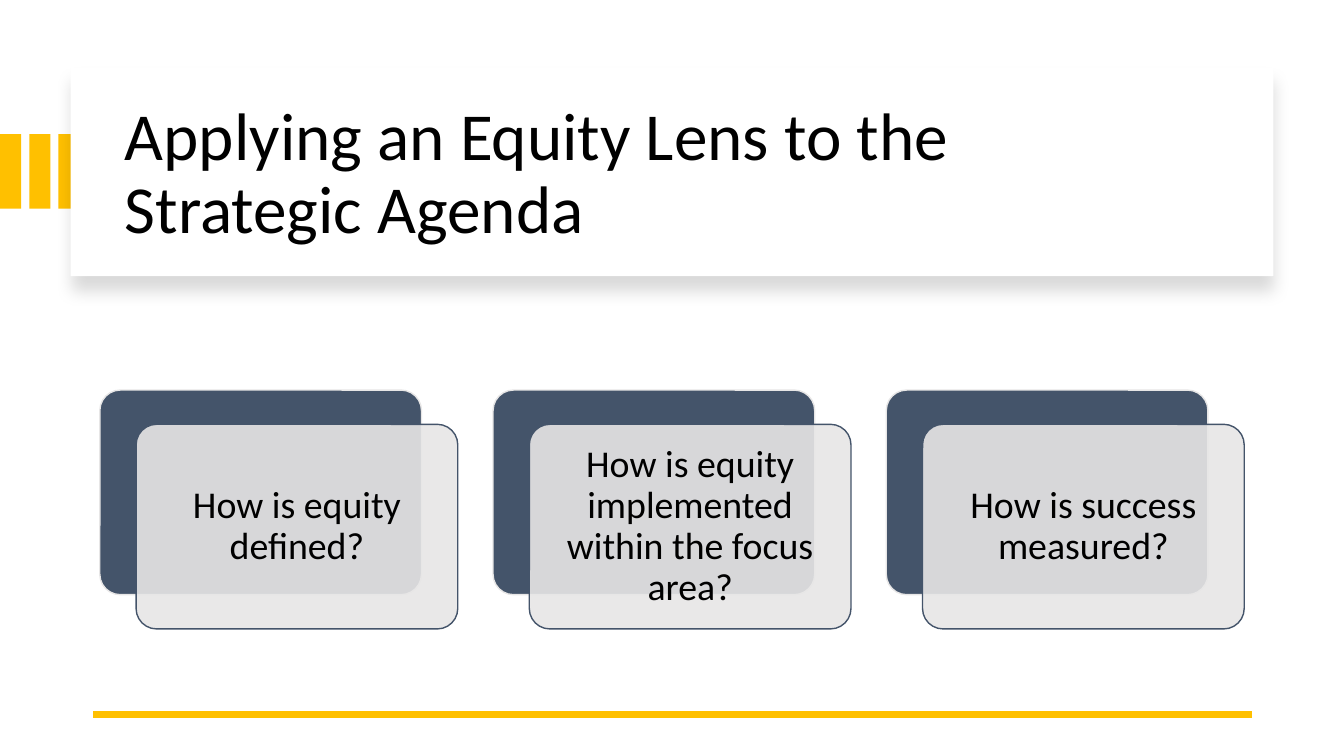
from dataclasses import dataclass

from lxml import etree
from pptx import Presentation
from pptx.dml.color import RGBColor
from pptx.enum.shapes import MSO_CONNECTOR, MSO_SHAPE
from pptx.enum.text import MSO_ANCHOR, PP_ALIGN
from pptx.oxml.ns import qn
from pptx.util import Inches, Pt

RECT = MSO_SHAPE.RECTANGLE
ROUNDED = MSO_SHAPE.ROUNDED_RECTANGLE
STRAIGHT = MSO_CONNECTOR.STRAIGHT
MIDDLE = MSO_ANCHOR.MIDDLE
LEFT = PP_ALIGN.LEFT
CENTER = PP_ALIGN.CENTER


@dataclass(frozen=True)
class Theme:
    font: str = "Calibri"
    ink: str = "000000"
    paper: str = "FFFFFF"
    accent: str = "FFC000"
    navy: str = "44546A"
    mist: str = "E7E6E6"
    title_size: float = 48
    question_size: float = 27
    outline: float = 1
    rule: float = 4.5


class SlideBuilder:
    def __init__(self, slide, theme):
        self.slide = slide
        self.theme = theme
        slide.background.fill.solid()
        slide.background.fill.fore_color.rgb = RGBColor.from_string(theme.paper)

    def panel(self, kind, left, top, width, height, fill, outline=None):
        panel = self.slide.shapes.add_shape(
            kind, Inches(left), Inches(top), Inches(width), Inches(height))
        panel.shadow.inherit = False
        panel.fill.solid()
        panel.fill.fore_color.rgb = RGBColor.from_string(fill)
        if outline:
            panel.line.color.rgb = RGBColor.from_string(outline)
            panel.line.width = Pt(self.theme.outline)
        else:
            panel.line.fill.background()
        return panel

    def card(self, left, top, width, height, fill, outline):
        card = self.panel(ROUNDED, left, top, width, height, fill, outline)
        card.adjustments[0] = 0.1
        return card

    def text_box(self, left, top, width, height):
        return self.slide.shapes.add_textbox(
            Inches(left), Inches(top), Inches(width), Inches(height))

    def add_text(self, holder, lines, size, align):
        frame = holder.text_frame
        frame.word_wrap = True
        frame.vertical_anchor = MIDDLE
        paragraph = frame.paragraphs[0]
        paragraph.alignment = align
        paragraph.line_spacing = 0.9
        for index, line in enumerate(lines):
            if index:
                paragraph.add_line_break()
            run = paragraph.add_run()
            run.text = line
            run.font.name = self.theme.font
            run.font.size = Pt(size)
            run.font.color.rgb = RGBColor.from_string(self.theme.ink)

    def inset(self, holder, margin):
        frame = holder.text_frame
        frame.margin_left = frame.margin_right = Inches(margin)
        frame.margin_top = frame.margin_bottom = Inches(margin)

    def opacity(self, panel, percent):
        color = panel._element.spPr.find(qn("a:solidFill"))[0]
        etree.SubElement(color, qn("a:alpha"), val=str(percent * 1000))

    def drop_shadow(self, panel, blur, distance, percent):
        effects = panel._element.spPr.find(qn("a:effectLst"))
        shadow = etree.SubElement(
            effects, qn("a:outerShdw"), blurRad=str(Pt(blur)),
            dist=str(Pt(distance)), dir="5400000", algn="t", rotWithShape="0")
        color = etree.SubElement(shadow, qn("a:srgbClr"), val=self.theme.ink)
        etree.SubElement(color, qn("a:alpha"), val=str(percent * 1000))

    def rule(self, left, right, y):
        rule = self.slide.shapes.add_connector(
            STRAIGHT, Inches(right), Inches(y), Inches(left), Inches(y))
        rule.line.color.rgb = RGBColor.from_string(self.theme.accent)
        rule.line.width = Pt(self.theme.rule)
        etree.SubElement(rule._element.spPr, qn("a:effectLst"))


def main():
    theme = Theme()
    deck = Presentation()
    deck.slide_width = Inches(13.33)
    deck.slide_height = Inches(7.5)
    builder = SlideBuilder(deck.slides.add_slide(deck.slide_layouts[6]), theme)

    for index in range(3):
        builder.panel(RECT, index * 0.29, 1.33, 0.21, 0.74, theme.accent)

    title_panel = builder.panel(RECT, 0.7, 0.67, 11.93, 2.07, theme.paper)
    builder.drop_shadow(title_panel, blur=11, distance=10, percent=15)
    title = builder.text_box(1.14, 0.89, 11.13, 1.7)
    builder.add_text(title, ["Applying an Equity Lens to the ", "Strategic Agenda"],
                     theme.title_size, LEFT)

    builder.rule(0.92, 12.42, 7.09)

    questions = [
        "How is equity defined?",
        "How is equity implemented within the focus area?",
        "How is success measured?",
    ]
    width, height = 3.19, 2.03
    for index, question in enumerate(questions):
        left = 0.99 + index * 3.9
        builder.card(left, 3.87, width, height, theme.navy, theme.mist)
        front = builder.card(left + 0.36, 4.21, width, height, theme.mist, theme.navy)
        builder.opacity(front, 90)
        builder.inset(front, 0.11)
        builder.add_text(front, [question], theme.question_size, CENTER)

    deck.save("out.pptx")


if __name__ == "__main__":
    main()
